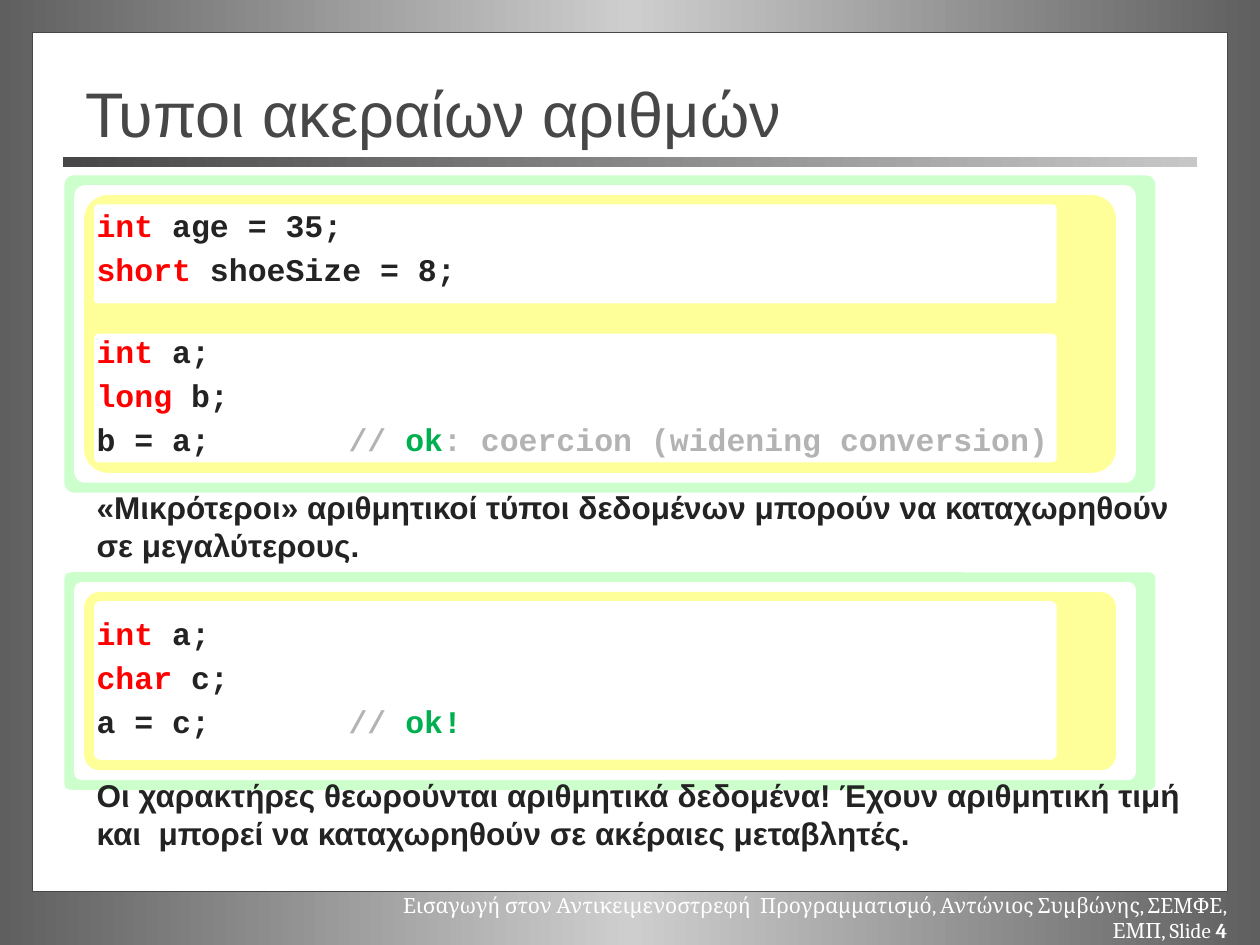
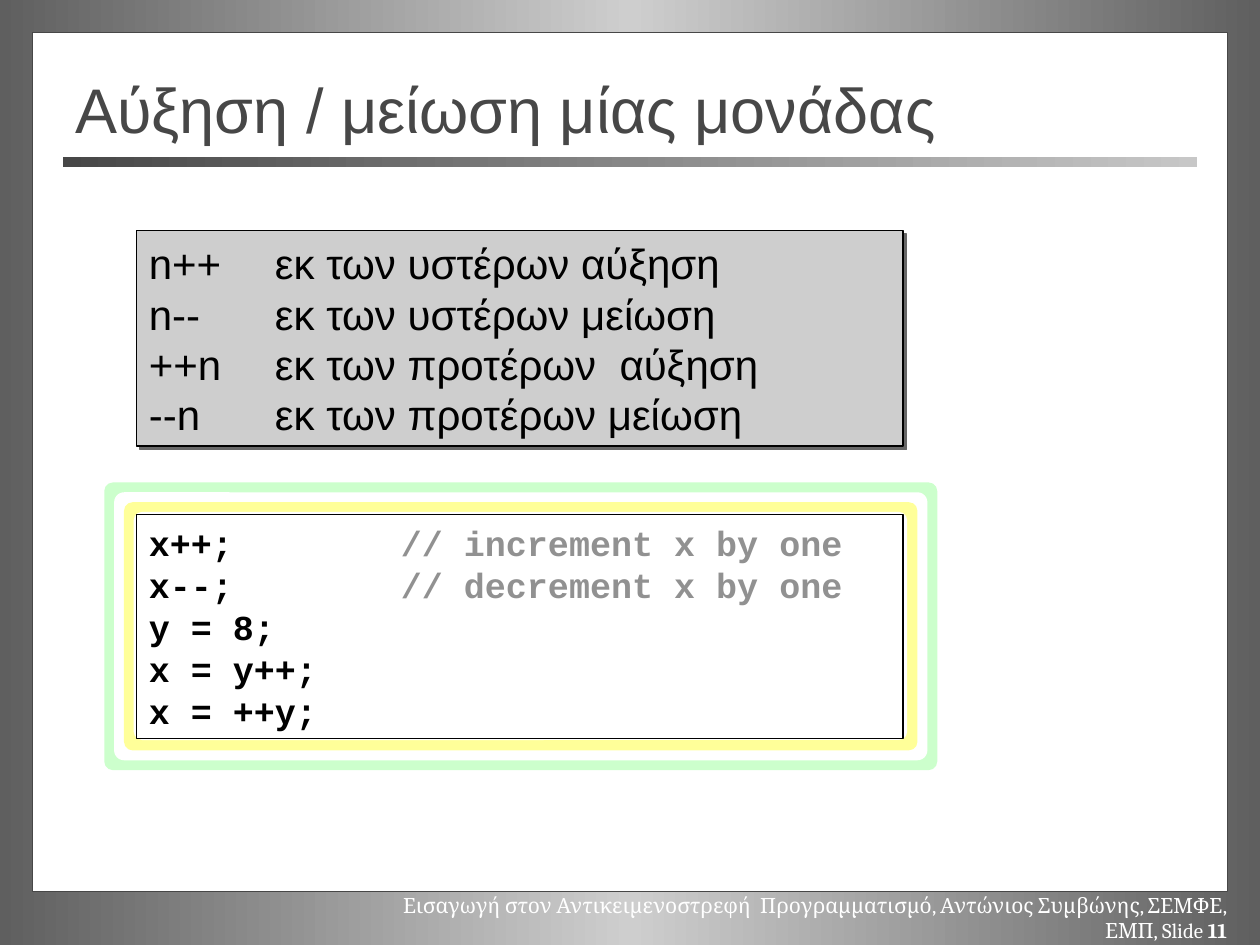
import lxml.etree
import pptx
import pptx.dml.color
import pptx.enum.shapes
import pptx.enum.text
import pptx.oxml.ns
import pptx.util

Pt = pptx.util.Pt
SHAPE = pptx.enum.shapes.MSO_SHAPE
ALIGN = pptx.enum.text.PP_ALIGN
ANCHOR = pptx.enum.text.MSO_ANCHOR
qn = pptx.oxml.ns.qn

WHITE, BLACK = "FFFFFF", "000000"
SLATE, DARK, SILVER, MIST = "474747", "5F5F5F", "CECECE", "C7C7C7"
GREEN_BAND, YELLOW_BAND = "CCFFCC", "FFFF99"
INK, KEYWORD, COMMENT, OK = "232323", "FF0000", "B3B3B3", "00B050"
REMARK, SHADOW = "919191", "676767"
SANS, MONO, SERIF = "Arial", "Courier New", "Cambria"
COURSE = "Εισαγωγή στον Αντικειμενοστρεφή  Προγραμματισμό, Αντώνιος Συμβώνης, ΣΕΜΦΕ, ΕΜΠ, Slide "
BAND_STEP = 5.64
LINE_RATIO = 1.2
TAB_STEP = 72


def rgb(value):
    return pptx.dml.color.RGBColor.from_string(value)


def paint_gradient(fill, owner, colours):
    fill.gradient()
    fill.gradient_angle = 0
    stops = next(owner.iter(qn("a:gsLst")))
    for stop in list(stops):
        stops.remove(stop)
    for index, colour in enumerate(colours):
        position = 100000 * index // (len(colours) - 1)
        stop = lxml.etree.SubElement(stops, qn("a:gs"), pos=str(position))
        lxml.etree.SubElement(stop, qn("a:srgbClr"), val=colour)


def add_panel(slide, box, fill, line=None, corner=None):
    kind = SHAPE.RECTANGLE if corner is None else SHAPE.ROUNDED_RECTANGLE
    panel = slide.shapes.add_shape(kind, *map(Pt, box))
    panel.shadow.inherit = False
    if corner is not None:
        panel.adjustments[0] = corner
    if isinstance(fill, str):
        panel.fill.solid()
        panel.fill.fore_color.rgb = rgb(fill)
    else:
        paint_gradient(panel.fill, panel.element, fill)
    if line:
        panel.line.color.rgb = rgb(line)
        panel.line.width = Pt(0.75)
    else:
        panel.line.fill.background()
    return panel


def add_run(paragraph, text, size, font, colour, bold=False):
    run = paragraph.add_run()
    run.text = text
    run.font.size = Pt(size)
    run.font.name = font
    run.font.bold = bold
    run.font.color.rgb = rgb(colour)


def add_text(slide, box):
    frame = slide.shapes.add_textbox(*map(Pt, box)).text_frame
    frame.word_wrap = True
    return frame


def write_lines(frame, lines, size, font, bold=False):
    for index, (gap, runs) in enumerate(lines):
        paragraph = frame.paragraphs[0] if index == 0 else frame.add_paragraph()
        paragraph.alignment = ALIGN.LEFT
        paragraph.line_spacing = Pt(size * LINE_RATIO)
        paragraph.space_before = Pt(gap)
        paragraph._p.get_or_add_pPr().set("defTabSz", str(Pt(TAB_STEP)))
        for text, colour, *face in runs:
            add_run(paragraph, text, size, face[0] if face else font, colour, bold)


def add_bands(slide, left, top, width, height, shrink, yellow_corner):
    layers = ((GREEN_BAND, 0.03), (WHITE, 0.037), (YELLOW_BAND, yellow_corner))
    for depth, (colour, corner) in enumerate(layers):
        inset = depth * BAND_STEP
        box = (left + inset, top + inset, width - depth * shrink, height - 2 * inset)
        add_panel(slide, box, colour, corner=corner)


def add_base(deck, number, title, title_box):
    slide = deck.slides.add_slide(deck.slide_layouts[6])
    paint_gradient(slide.background.fill, slide.element, (DARK, SILVER, DARK))
    add_panel(slide, (18.6, 18.6, 683, 491), WHITE, SLATE)
    footer = add_text(slide, (201.4, 506.4, 506.9, 21.6)).paragraphs[0]
    footer.alignment = ALIGN.RIGHT
    add_run(footer, COURSE, 12, SERIF, WHITE)
    add_run(footer, str(number), 12, SERIF, WHITE, True)
    add_panel(slide, (36, 89.7, 648, 6), (SLATE, MIST))
    heading = add_text(slide, title_box)
    heading.vertical_anchor = ANCHOR.MIDDLE
    add_run(heading.paragraphs[0], title, 36, SANS, SLATE)
    return slide


def add_integer_types(deck):
    slide = add_base(deck, 4, "Τυποι ακεραίων αριθμών", (42, 42, 612, 44.6))
    for top, height in ((327, 124.4), (100.2, 181.3)):
        add_bands(slide, 36.8, top, 623.5, height, 16.9, 0.087)
    for top, height in ((343.6, 90.6), (116.8, 56.6), (190.7, 73.6)):
        add_panel(slide, (53.8, top, 550, height), WHITE, corner=0.037)
    gap = 3.6
    smaller = "«Μικρότεροι» αριθμητικοί τύποι δεδομένων μπορούν να καταχωρηθούν σε μεγαλύτερους."
    characters = ("Οι χαρακτήρες θεωρούνται αριθμητικά δεδομένα! Έχουν αριθμητική τιμή "
                  "και  μπορεί να καταχωρηθούν σε ακέραιες μεταβλητές.")
    lines = [
        (gap, [("int ", KEYWORD), ("age = 35;", INK)]),
        (gap, [("short ", KEYWORD), ("shoeSize = 8;", INK)]),
        (25.2, [("int", KEYWORD), (" a;", INK)]),
        (gap, [("long", KEYWORD), (" b;", INK)]),
        (gap, [("b = a;\t\t", INK), ("// ", COMMENT), ("ok", OK),
               (": coercion (widening conversion)", COMMENT)]),
        (17.2, [(smaller, INK, SANS)]),
        (28.8, [("int", KEYWORD), (" a;", INK)]),
        (gap, [("char", KEYWORD), (" c;", INK)]),
        (gap, [("a = c;\t\t", INK), ("// ", COMMENT), ("ok!", OK)]),
        (20.4, [(characters, INK, SANS)]),
    ]
    write_lines(add_text(slide, (48.1, 114.2, 637.2, 385.2)), lines, 18, MONO, True)


def add_drop_shadow(panel):
    effects = panel.element.spPr.find(qn("a:effectLst"))
    shadow = lxml.etree.SubElement(effects, qn("a:outerShdw"), dist=str(Pt(2.8)),
                                   dir="2700000", algn="ctr", rotWithShape="0")
    lxml.etree.SubElement(shadow, qn("a:srgbClr"), val=SHADOW)


def add_increments(deck):
    slide = add_base(deck, 11, "Αύξηση / μείωση μίας μονάδας", (36, 39.6, 630, 44.6))
    add_bands(slide, 59.6, 275.7, 476, 164.4, 2 * BAND_STEP, 0.035)
    add_panel(slide, (76.4, 292.5, 442, 130.4), WHITE, corner=0.037)

    code = add_panel(slide, (78, 293.8, 438, 128.2), WHITE, BLACK)
    code_lines = [[("x++;\t\t", BLACK), ("// increment x by one", REMARK)],
                  [("x--;\t\t", BLACK), ("// decrement x by one", REMARK)]]
    code_lines += [[(text, BLACK)] for text in ("y = 8;", "x = y++;", "x = ++y;")]
    write_lines(code.text_frame, [(0, runs) for runs in code_lines], 20, MONO, True)

    operators = add_panel(slide, (78, 131.8, 438, 123.1), SILVER, BLACK)
    add_drop_shadow(operators)
    meanings = (("n++", "εκ των υστέρων αύξηση"), ("n--", "εκ των υστέρων μείωση"),
                ("++n", "εκ των προτέρων  αύξηση"), ("--n", "εκ των προτέρων μείωση"))
    rows = [(0, [(f"{operator}\t{meaning}", BLACK)]) for operator, meaning in meanings]
    write_lines(operators.text_frame, rows, 24, SANS)


def main():
    deck = pptx.Presentation()
    deck.slide_width, deck.slide_height = Pt(720), Pt(540)
    add_integer_types(deck)
    add_increments(deck)
    deck.save("out.pptx")


if __name__ == "__main__":
    main()
